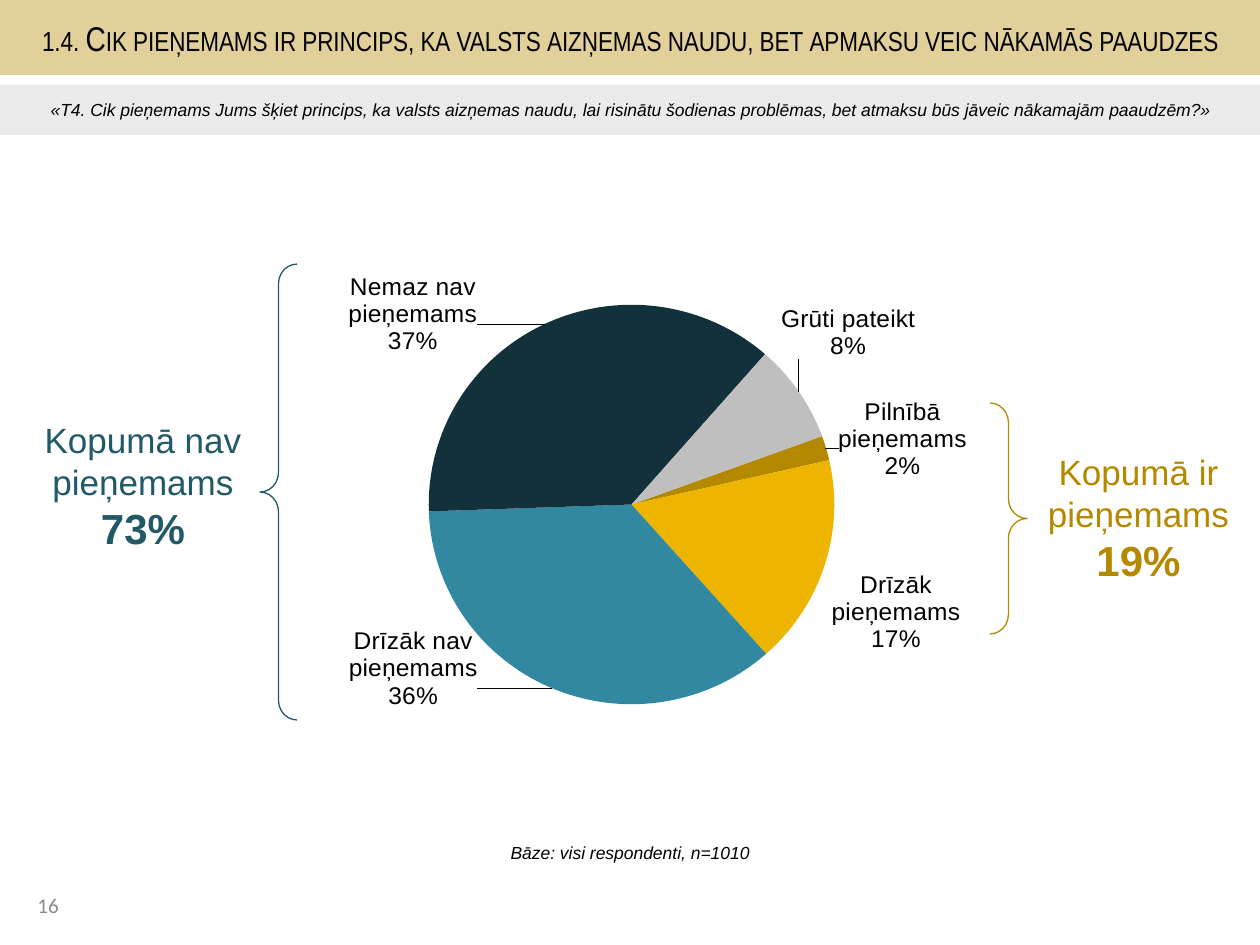
from copy import deepcopy
from dataclasses import dataclass

from lxml import etree
from pptx import Presentation, util as u
from pptx.chart.data import CategoryChartData
from pptx.dml.color import RGBColor
from pptx.enum import chart as ch, shapes, text
from pptx.oxml import parse_xml
from pptx.oxml.ns import nsdecls, qn

PX = u.Inches(1) / 126


@dataclass(frozen=True)
class Theme:
    font: str = "Arial"
    head: str = "Arial Narrow"
    foot: str = "Calibri"
    black: str = "000000"
    sand: str = "E1D099"
    pale: str = "D9D9D9"
    mute: str = "8C8C8C"
    gold: str = "B48900"
    amber: str = "EEB500"
    teal: str = "3288A0"
    deep: str = "215968"
    dark: str = "12313A"
    gray: str = "BFBFBF"
    title: float = 19.6
    note: int = 10
    page: int = 12
    label: int = 14
    group: int = 20
    total: int = 24


T = Theme()


def box(*px):
    return [round(n * PX) for n in px]


def write(shape, lines, color, name=T.font, italic=False, align=text.PP_ALIGN.CENTER):
    """Fill a shape with (words, size, bold) lines, centred vertically."""
    frame = shape.text_frame
    frame.word_wrap = True
    frame.auto_size = text.MSO_AUTO_SIZE.NONE
    frame.vertical_anchor = text.MSO_ANCHOR.MIDDLE
    for i, (words, size, bold) in enumerate(lines):
        para = frame.add_paragraph() if i else frame.paragraphs[0]
        para.alignment = align
        run = para.add_run()
        run.text = words
        font = run.font
        font.name, font.size = name, u.Pt(size)
        font.bold, font.italic = bold, italic
        font.color.rgb = RGBColor.from_string(color)


prs = Presentation()
prs.slide_width, prs.slide_height = box(1260, 945)
slide = prs.slides.add_slide(prs.slide_layouts[5])
items = slide.shapes

# Title band
title = items.title
title.left, title.top, title.width, title.height = box(0, 0, 1260, 75)
title.fill.solid()
title.fill.fore_color.rgb = RGBColor.from_string(T.sand)
write(title, [("1.4. Cik pieņemams ir princips, ka valsts aizņemas naudu, "
               "bet apmaksu veic nākamās paaudzes", T.title, False)], T.black, T.head)
title.text_frame.paragraphs[0].runs[0].font._element.set("cap", "small")

# Question band
band = items.add_shape(shapes.MSO_SHAPE.RECTANGLE, *box(0, 85, 1260, 50))
band.shadow.inherit = False
band.fill.solid()
band.fill.fore_color.rgb = RGBColor.from_string(T.pale)
tint = band.fill._xPr.find(".//" + qn("a:srgbClr"))
etree.SubElement(tint, qn("a:alpha")).set("val", "50000")
band.line.fill.background()
write(band, [("«T4. Cik pieņemams Jums šķiet princips, ka valsts aizņemas naudu, lai risinātu "
              "šodienas problēmas, bet atmaksu būs jāveic nākamajām paaudzēm?»",
              T.note, False)], T.black, italic=True)

# Pie chart: name, value, colour, label shift in px
parts = [
    ("Pilnībā pieņemams", 2, T.gold, (5, 34)),
    ("Drīzāk pieņemams", 17, T.amber, (0, 4)),
    ("Drīzāk nav pieņemams", 36, T.teal, (-71, -68)),
    ("Nemaz nav pieņemams", 37, T.dark, (-64, 38)),
    ("Grūti pateikt", 8, T.gray, (-24, -28)),
]
wide, high = 863, 599
data = CategoryChartData(number_format="###0")
data.categories = [part[0] for part in parts]
data.add_series("Series 1", [part[1] for part in parts])
chart = items.add_chart(ch.XL_CHART_TYPE.PIE, *box(213, 236, wide, high), data).chart
chart.has_legend = chart.has_title = False
chart.font.name, chart.font.size = T.font, u.Pt(T.note)
chart.font.color.rgb = RGBColor.from_string(T.black)
plot = chart.plots[0]
plot.vary_by_categories = True
series = plot.series[0]

tags = series.data_labels
tags.show_value = False
tags.show_category_name = tags.show_percentage = True
tags.number_format, tags.number_format_is_linked = "0%", False
tags.position = ch.XL_LABEL_POSITION.OUTSIDE_END
tags.font.name, tags.font.size = T.font, u.Pt(T.label)
tags.font.color.rgb = RGBColor.from_string(T.black)
mark = etree.Element(qn("c:separator"))
mark.text = "\n"
tags._element.find(qn("c:showBubbleSize")).addnext(mark)

# Each slice gets its colour and a label moved from the default place
lead = (qn("c:showLeaderLines"), qn("c:leaderLines"))
common = [node for node in tags._element if node.tag not in lead]
for i, (_, _, color, (dx, dy)) in enumerate(parts):
    fill = series.points[i].format.fill
    fill.solid()
    fill.fore_color.rgb = RGBColor.from_string(color)
    tag = parse_xml(
        f'<c:dLbl {nsdecls("c")}><c:idx val="{i}"/><c:layout><c:manualLayout>'
        f'<c:x val="{dx / wide:.4f}"/><c:y val="{dy / high:.4f}"/>'
        '</c:manualLayout></c:layout></c:dLbl>')
    for node in common:
        tag.append(deepcopy(node))
    tags._element.insert(i, tag)

pie = plot._element
turn = pie.find(qn("c:firstSliceAng"))
if turn is None:
    turn = etree.SubElement(pie, qn("c:firstSliceAng"))
turn.set("val", "70")
area = pie.getparent()
for old in area.findall(qn("c:layout")):
    area.remove(old)
area.insert(0, parse_xml(
    f'<c:layout {nsdecls("c")}><c:manualLayout><c:layoutTarget val="inner"/>'
    '<c:xMode val="edge"/><c:yMode val="edge"/><c:x val="0.25"/><c:y val="0.1"/>'
    '<c:w val="0.47"/><c:h val="0.68"/></c:manualLayout></c:layout>'))

# Group braces with their totals
groups = [
    ((990, 403, 37, 231), 0, (1015, 443, 247, 149), T.gold,
     ["Kopumā ir", "pieņemams"], "19%"),
    ((260, 264, 37, 456), 180, (30, 411, 226, 149), T.deep,
     ["Kopumā nav pieņemams"], "73%"),
]
for spot, angle, place, color, words, total in groups:
    brace = items.add_shape(shapes.MSO_SHAPE.RIGHT_BRACE, *box(*spot))
    brace.shadow.inherit = False
    brace.rotation = angle
    brace.adjustments[0] = 0.53
    brace.fill.background()
    brace.line.color.rgb = RGBColor.from_string(color)
    brace.line.width = u.Pt(0.75)
    lines = [(word, T.group, False) for word in words] + [(total, T.total, True)]
    write(items.add_textbox(*box(*place)), lines, color)

# Base note and page number
write(items.add_textbox(*box(0, 823, 1260, 59)),
      [("Bāze: visi respondenti, n=1010", T.note, False)], T.black, italic=True)
write(items.add_textbox(*box(25, 883, 134, 45)), [("16", T.page, False)],
      T.mute, T.foot, align=text.PP_ALIGN.LEFT)

prs.save("out.pptx")
